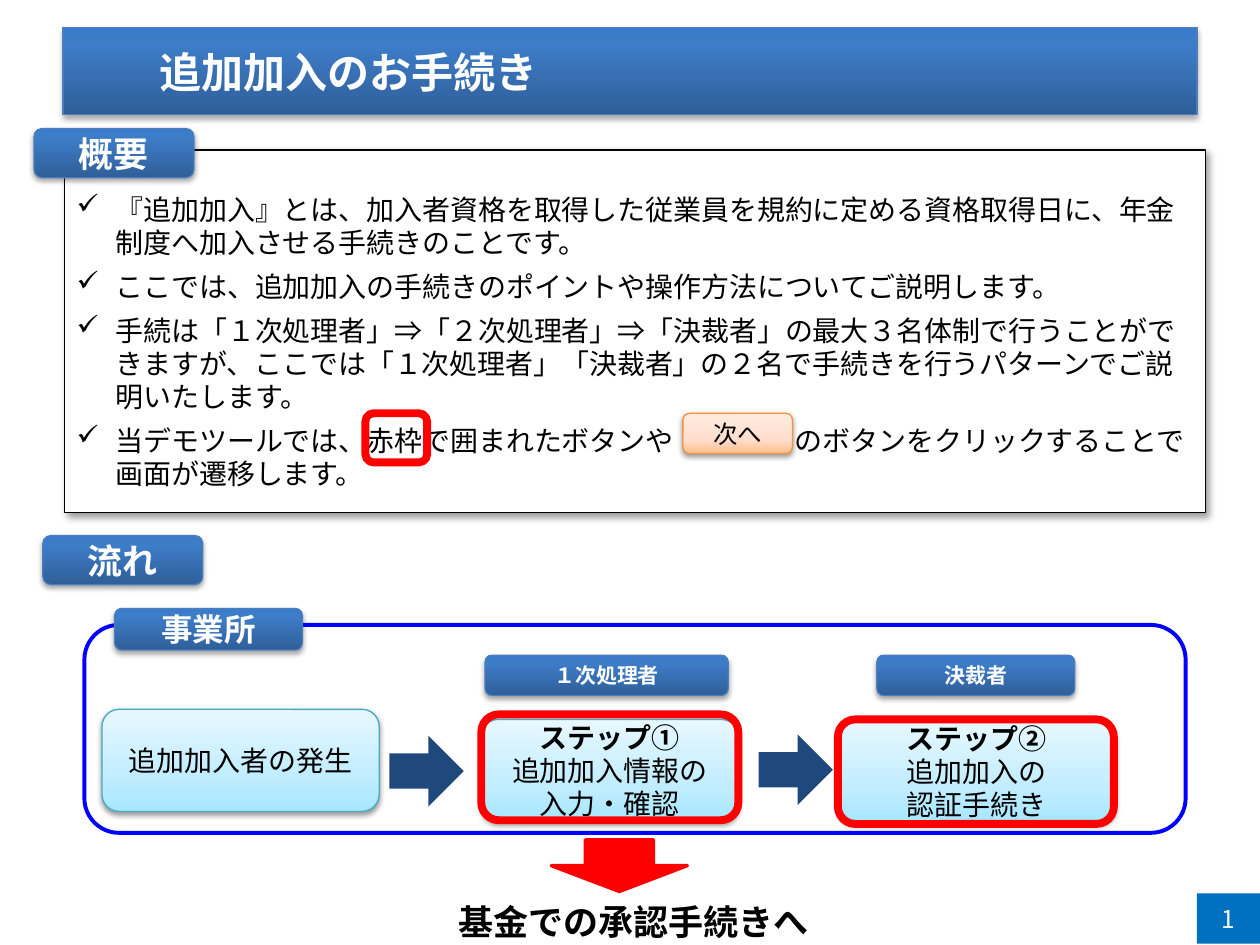
"""Build the slide that explains the additional enrolment procedure."""
import pptx
import pptx.dml.color
import pptx.enum.shapes
import pptx.enum.text
import pptx.oxml
import pptx.oxml.ns
import pptx.util
from lxml import etree

Inches, Pt = pptx.util.Inches, pptx.util.Pt
qn = pptx.oxml.ns.qn
KIND = pptx.enum.shapes.MSO_SHAPE
ALIGN = pptx.enum.text.PP_ALIGN
ANCHOR = pptx.enum.text.MSO_ANCHOR

FONT = "Noto Sans CJK JP"
GAP = "　"
GAP_SPACING = 53
LINE_PITCH = 19

NAVY_STYLE = {
    "fill": [(0, "2F5F99"), (80, "3D7CC7"), (100, "3A7CCB")],
    "line": "4B7EBC", "shadow": (35, 3.1, 1.8, 90),
}
SKY_STYLE = {
    "fill": [(0, "A7E6FF"), (35, "C1EDFF"), (100, "E7F8FF")],
    "line": "46AAC5", "shadow": (38, 3.1, 1.6, 90),
}
PEACH_STYLE = {
    "fill": [(0, "FFBE86"), (35, "FFDED0"), (100, "FFEBDB")],
    "line": "F69240", "shadow": (38, 3.1, 1.6, 90),
}
PANEL_STYLE = {"fill": "FFFFFF", "line": "000000", "shadow": (40, 4, 3, 45)}
RED_FRAME_STYLE = {"line": "FF0000", "line_width": 4.5}

TITLE = "追加加入のお手続き"
OVERVIEW = [
    ["『追加加入』とは、加入者資格を取得した従業員を規約に定める資格取得日に、年金制度へ加入させる手続きのことです。"],
    ["ここでは、追加加入の手続きのポイントや操作方法についてご説明します。"],
    ["手続は「１次処理者」⇒「２次処理者」⇒「決裁者」の最大３名体制で行うことができますが、"
     "ここでは「１次処理者」「決裁者」の２名で手続きを行うパターンでご説明いたします。"],
    ["当デモツールでは、赤枠で囲まれたボタンや", GAP, "のボタンをクリックすることで画面が遷移します。"],
]
LABELS = [
    ("流れ", 20, (0.34, 4.25, 1.27, 0.39)),
    ("概要", 20, (0.27, 1.02, 1.27, 0.39)),
    ("事業所", 18, (0.91, 4.83, 1.49, 0.33)),
    ("１次処理者", 12, (3.85, 5.2, 1.93, 0.32)),
    ("決裁者", 12, (6.96, 5.2, 1.57, 0.32)),
]
STEPS = [
    (None, ["追加加入者の発生"], (0.81, 5.63, 2.2, 0.81)),
    ("ステップ①", ["追加加入情報の入力・確認"], (3.82, 5.71, 2.04, 0.81)),
    ("ステップ②", ["追加加入の", "認証手続き"], (6.65, 5.72, 2.2, 0.81)),
]
FLOW_ARROWS = [(3.09, 5.84, 0.59, 0.56), (6.02, 5.83, 0.59, 0.56)]
RED_FRAMES = [(3.82, 5.67, 2.04, 0.84), (6.65, 5.71, 2.19, 0.83), (2.9, 3.28, 0.49, 0.39)]


def color(value):
    return pptx.dml.color.RGBColor.from_string(value)


def add_gradient(shape, stops):
    shape.fill.gradient()
    shape.fill.gradient_angle = 90
    stop_list = shape._element.spPr.find(qn("a:gradFill")).find(qn("a:gsLst"))
    for stop in list(stop_list):
        stop_list.remove(stop)
    for position, value in stops:
        stop = etree.SubElement(stop_list, qn("a:gs"), pos=str(position * 1000))
        etree.SubElement(stop, qn("a:srgbClr"), val=value)


def add_shadow(shape, opacity, blur, distance, angle):
    effects = shape._element.spPr.find(qn("a:effectLst"))
    outer = etree.SubElement(
        effects, qn("a:outerShdw"), blurRad=str(int(Pt(blur))), dist=str(int(Pt(distance))),
        dir=str(angle * 60000), rotWithShape="0")
    black = etree.SubElement(outer, qn("a:srgbClr"), val="000000")
    etree.SubElement(black, qn("a:alpha"), val=str(opacity * 1000))


def add_box(slide, kind, place, fill=None, line=None, line_width=0.75, shadow=None):
    shape = slide.shapes.add_shape(kind, *map(Inches, place))
    shape.shadow.inherit = False
    if isinstance(fill, list):
        add_gradient(shape, fill)
    elif fill:
        shape.fill.solid()
        shape.fill.fore_color.rgb = color(fill)
    else:
        shape.fill.background()
    if line:
        shape.line.color.rgb = color(line)
        shape.line.width = Pt(line_width)
    else:
        shape.line.fill.background()
    if shadow:
        add_shadow(shape, *shadow)
    return shape


def add_text(paragraph, text, size=16, value="000000", bold=False, spacing=0):
    run = paragraph.add_run()
    run.text = text
    run.font.size = Pt(size)
    run.font.bold = bold
    run.font.color.rgb = color(value)
    run.font.name = FONT
    properties = run._r.get_or_add_rPr()
    etree.SubElement(properties, qn("a:ea"), typeface=FONT)
    if spacing:
        properties.set("spc", str(spacing * 100))


def write_lines(shape, lines, align=ALIGN.CENTER, pitch=None, wrap=True, **style):
    frame = shape.text_frame
    frame.word_wrap = wrap
    frame.vertical_anchor = ANCHOR.MIDDLE
    for index, (text, bold) in enumerate(lines):
        paragraph = frame.add_paragraph() if index else frame.paragraphs[0]
        paragraph.alignment = align
        if pitch:
            paragraph.line_spacing = Pt(pitch)
        add_text(paragraph, text, bold=bold, **style)


def write_checklist(shape, items):
    frame = shape.text_frame
    frame.word_wrap = True
    frame.vertical_anchor = ANCHOR.TOP
    frame.margin_top = Inches(0.34)
    for index, parts in enumerate(items):
        paragraph = frame.add_paragraph() if index else frame.paragraphs[0]
        paragraph.alignment = ALIGN.LEFT
        paragraph.line_spacing = Pt(LINE_PITCH)
        paragraph.space_after = Pt(6)
        properties = paragraph._p.get_or_add_pPr()
        indent = int(Inches(0.31))
        properties.set("marL", str(indent))
        properties.set("indent", str(-indent))
        etree.SubElement(properties, qn("a:buChar"), char="✓")
        for text in parts:
            add_text(paragraph, text, spacing=GAP_SPACING if text == GAP else 0)


def main():
    presentation = pptx.Presentation()
    presentation.slide_width, presentation.slide_height = Inches(10), Inches(7.5)
    slide = presentation.slides.add_slide(presentation.slide_layouts[6])
    rounded = KIND.ROUNDED_RECTANGLE

    add_box(slide, rounded, (0.67, 4.96, 8.74, 1.65), line="0000FF", line_width=2.25)
    page_number = add_box(slide, KIND.RECTANGLE, (9.5, 7.09, 0.5, 0.4), fill="0070C0")
    write_lines(page_number, [("1", False)], size=14, value="FFFFFF")

    overview = add_box(slide, KIND.RECTANGLE, (0.51, 1.19, 9.06, 2.88), **PANEL_STYLE)
    write_checklist(overview, OVERVIEW)

    title = add_box(slide, KIND.RECTANGLE, (0.5, 0.22, 9, 0.69), **NAVY_STYLE)
    title.text_frame.margin_left = Inches(0.77)
    write_lines(title, [(TITLE, True)], align=ALIGN.LEFT, size=24, value="FFFFFF")

    for text, size, place in LABELS:
        label = add_box(slide, rounded, place, **NAVY_STYLE)
        write_lines(label, [(text, True)], size=size, value="FFFFFF")
    for heading, body, place in STEPS:
        step = add_box(slide, rounded, place, **SKY_STYLE)
        lines = [(heading, True)] if heading else []
        write_lines(step, lines + [(text, False) for text in body], pitch=LINE_PITCH)
    for place in FLOW_ARROWS:
        add_box(slide, KIND.RIGHT_ARROW, place, fill="1F497D")

    down_arrow = add_box(slide, KIND.RIGHT_ARROW, (4.71, 6.33, 0.41, 1.08),
                         fill="FF0000", line="FF0000", line_width=2)
    down_arrow.rotation = 90
    outcome = slide.shapes.add_textbox(*map(Inches, (3.54, 7.09, 2.99, 0.44)))
    write_lines(outcome, [("基金での承認手続きへ", True)], align=ALIGN.LEFT, wrap=False, size=20)

    next_button = add_box(slide, rounded, (5.42, 3.28, 0.87, 0.32), **PEACH_STYLE)
    write_lines(next_button, [("次へ", False)], size=14)
    for place in RED_FRAMES:
        add_box(slide, rounded, place, **RED_FRAME_STYLE)

    presentation.save("out.pptx")


if __name__ == "__main__":
    main()
